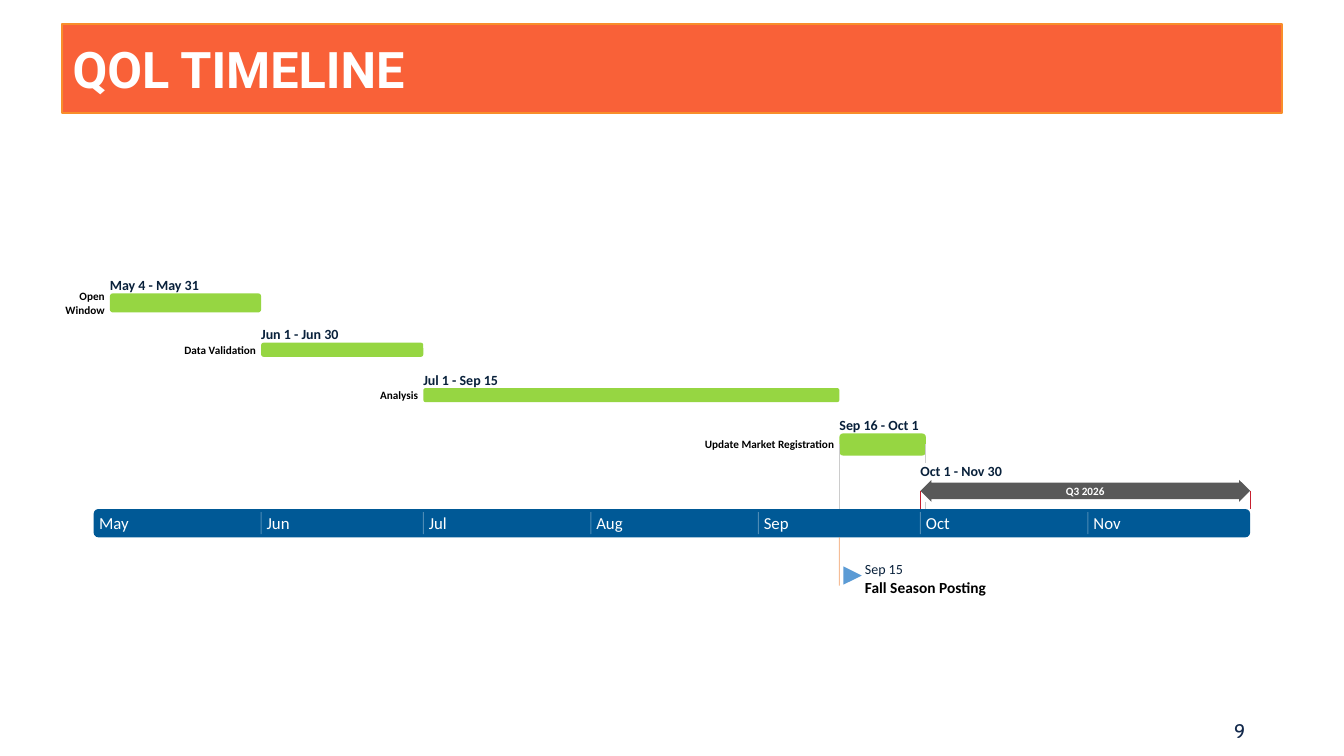
"""Build the QOL timeline slide: a month band with task bars and a milestone."""
from lxml.etree import SubElement
from pptx import Presentation
from pptx.dml.color import RGBColor
from pptx.enum.shapes import MSO_CONNECTOR, MSO_SHAPE
from pptx.enum.text import MSO_ANCHOR, MSO_AUTO_SIZE, PP_ALIGN
from pptx.oxml.ns import qn
from pptx.util import Pt

THEME = {
    "banner": "F96138", "banner line": "F88E2B", "band": "005996",
    "task": "96D642", "quarter": "595959", "flag": "5B9BD5",
    "guide": "CCCCCC", "limit": "C7202F", "milestone": "ED7D31", "divider": "FFFFFF",
    "title": {"name": "Roboto", "size": 36, "bold": True, "color": "FFFFFF"},
    "number": {"name": "Cabin", "size": 14, "bold": False, "color": "12284B"},
    "month": {"name": "Calibri", "size": 12, "bold": False, "color": "FFFFFF"},
    "dates": {"name": "Calibri", "size": 10, "bold": True, "color": "09213B"},
    "label": {"name": "Calibri", "size": 8, "bold": True, "color": "000000"},
    "quarter label": {"name": "Calibri", "size": 8, "bold": True, "color": "FFFFFF"},
    "event": {"name": "Calibri", "size": 11, "bold": True, "color": "000000"},
    "event date": {"name": "Calibri", "size": 10, "bold": False, "color": "09213B"},
}
ORIGIN, DAY = 66.9, 3.86
BAND_TOP, BAND_HEIGHT = 363.6, 20.2
DATES_HEIGHT, LABEL_HEIGHT, LABEL_GAP = 12.2, 10, 3.6

presentation = Presentation()
presentation.slide_width, presentation.slide_height = Pt(960), Pt(540)
slide = presentation.slides.add_slide(presentation.slide_layouts[5])
shapes = slide.shapes


def write(shape, text, style, align=PP_ALIGN.LEFT):
    frame = shape.text_frame
    frame.text = text
    frame.word_wrap = True
    frame.auto_size = MSO_AUTO_SIZE.NONE
    frame.vertical_anchor = MSO_ANCHOR.MIDDLE
    paragraph = frame.paragraphs[0]
    paragraph.alignment = align
    font = paragraph.runs[0].font
    for key, value in THEME[style].items():
        if key == "color":
            font.color.rgb = RGBColor.from_string(value)
        else:
            setattr(font, key, Pt(value) if key == "size" else value)


def add_label(text, style, left, top, width, height, align=PP_ALIGN.LEFT):
    box = shapes.add_textbox(Pt(left), Pt(top), Pt(width), Pt(height))
    for side in ("left", "top", "right", "bottom"):
        setattr(box.text_frame, f"margin_{side}", 0)
    write(box, text, style, align)


title = shapes.title
for side, value in {"left": 44.6, "top": 17.3, "width": 871.2, "height": 63.4}.items():
    setattr(title, side, Pt(value))
outline = SubElement(title._element.spPr, qn("a:prstGeom"), prst="roundRect")
SubElement(outline, qn("a:avLst"))
title.fill.solid()
title.fill.fore_color.rgb = RGBColor.from_string(THEME["banner"])
title.line.color.rgb = RGBColor.from_string(THEME["banner line"])
title.line.width = Pt(1.5)
write(title, "QOL TIMELINE", "title")
add_label("9", "number", 871.2, 512, 28.8, 20, PP_ALIGN.CENTER)

tasks = [
    ("Open Window", "May 4 - May 31", 3, 31, 209.5, 13.7, 40),
    ("Data Validation", "Jun 1 - Jun 30", 31, 61, 244.8, 10.1, 100),
    ("Analysis", "Jul 1 - Sep 15", 61, 138, 277.2, 10.1, 100),
    ("Update Market Registration", "Sep 16 - Oct 1", 138, 154, 309.6, 15.8, 100),
    ("Q3 2026", "Oct 1 - Nov 30", 153, 214, 342.7, 15.8, 100),
]
months = {"May": 0, "Jun": 31, "Jul": 61, "Aug": 92, "Sep": 123, "Oct": 153, "Nov": 184}
posting_x = ORIGIN + 138 * DAY

blocks = [("band", MSO_SHAPE.ROUNDED_RECTANGLE, ORIGIN, BAND_TOP, 214 * DAY, BAND_HEIGHT)]
for name, dates, start, end, top, height, label_width in tasks:
    left, width = ORIGIN + start * DAY, (end - start) * DAY
    label_top = top + (height - LABEL_HEIGHT) / 2
    if name == "Q3 2026":
        blocks.append(("quarter", MSO_SHAPE.LEFT_RIGHT_ARROW, left, top, width, height))
    else:
        blocks.append(("task", MSO_SHAPE.ROUNDED_RECTANGLE, left, top, width, height))
        add_label(name, "label", left - LABEL_GAP - label_width, label_top,
                  label_width, LABEL_HEIGHT, PP_ALIGN.RIGHT)
    add_label(dates, "dates", left, top - DATES_HEIGHT, 76, DATES_HEIGHT)
blocks.append(("flag", MSO_SHAPE.FLOWCHART_MERGE, posting_x + 2.9, 404.6, 13, 13))

for role, preset, left, top, width, height in blocks:
    block = shapes.add_shape(preset, Pt(left), Pt(top), Pt(width), Pt(height))
    block.shadow.inherit = False
    block.fill.solid()
    block.fill.fore_color.rgb = RGBColor.from_string(THEME[role])
    block.line.fill.background()
    if role == "task":
        update_bar = block
    elif role == "quarter":
        block.adjustments[0] = 0.75
        for side in ("left", "top", "right", "bottom"):
            setattr(block.text_frame, f"margin_{side}", 0)
        write(block, "Q3 2026", "quarter label", PP_ALIGN.CENTER)
    elif role == "flag":
        block.rotation = 270

update_end, quarter_start, quarter_end = (ORIGIN + day * DAY for day in (154, 153, 214))
lines = [
    ("guide", posting_x, 317.5, BAND_TOP, 0.75, None, 1),
    ("guide", update_end, 317.5, 330.5, 0.75, None, 3),
    ("guide", update_end, 358.5, BAND_TOP, 0.75, None, None),
    ("limit", quarter_start, 350.6, BAND_TOP, 0.5, None, None),
    ("limit", quarter_end, 350.6, BAND_TOP, 0.5, None, None),
    ("milestone", posting_x, BAND_TOP + BAND_HEIGHT, 418.3, 0.75, 50, None),
]
for month, day in months.items():
    month_x = ORIGIN + day * DAY
    add_label(month, "month", month_x + 3.9, BAND_TOP, 40, BAND_HEIGHT)
    if day:
        lines.append(("divider", month_x, 365.8, 381.6, 0.75, 30, None))

for role, x, top, bottom, weight, opacity, site in lines:
    line = shapes.add_connector(MSO_CONNECTOR.STRAIGHT, Pt(x), Pt(top), Pt(x), Pt(bottom))
    if site is not None:
        line.begin_connect(update_bar, site)
    line.line.color.rgb = RGBColor.from_string(THEME[role])
    line.line.width = Pt(weight)
    if opacity:
        color = line._element.spPr.find(".//" + qn("a:srgbClr"))
        SubElement(color, qn("a:alpha"), val=str(opacity * 1000))
    SubElement(line._element.spPr, qn("a:effectLst"))

add_label("Sep 15", "event date", 617.8, 400.3, 60, 12.2)
add_label("Fall Season Posting", "event", 617.8, 412.6, 110, 13.7)

presentation.save("out.pptx")
